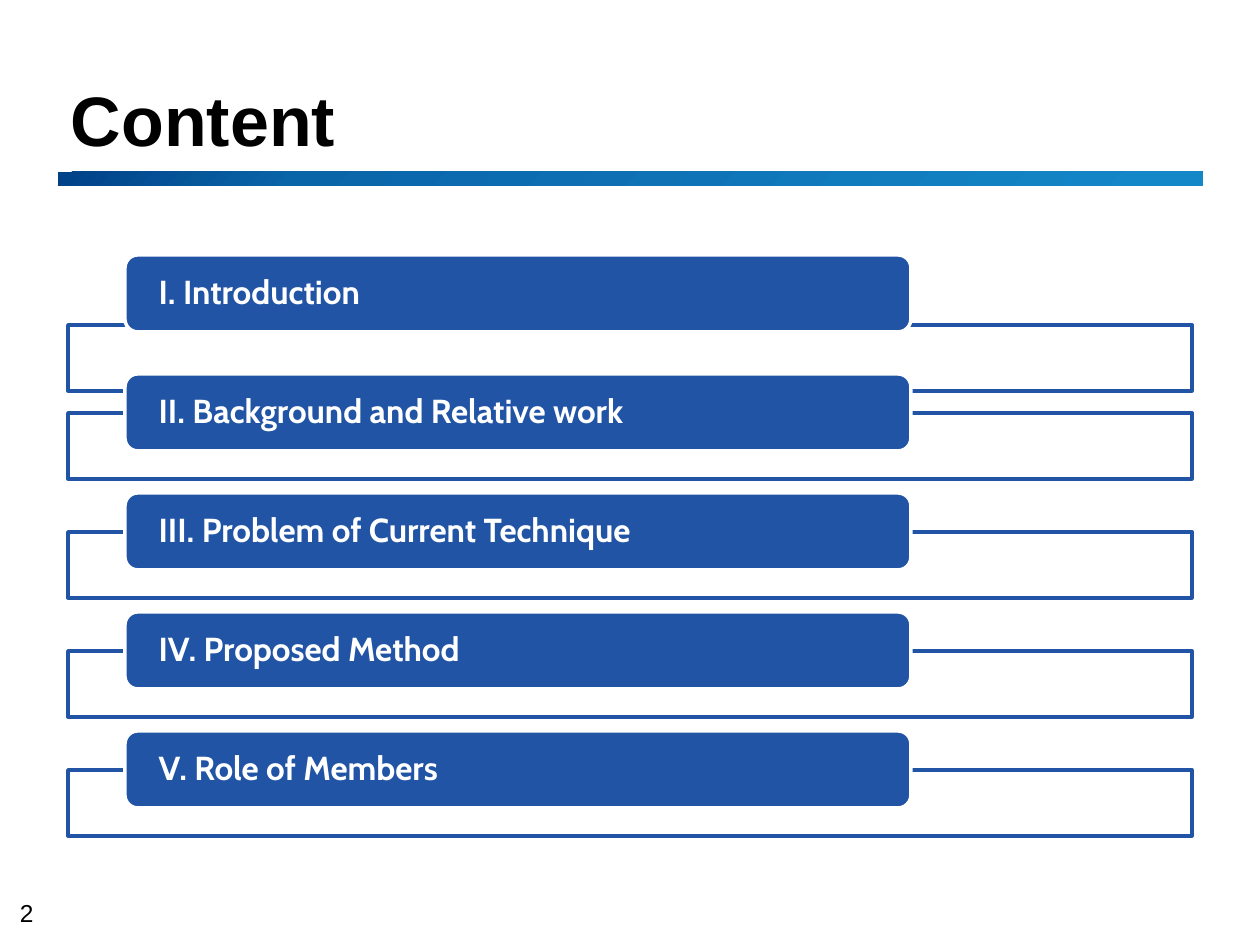
from copy import deepcopy

from pptx import Presentation
from pptx.dml.color import RGBColor
from pptx.enum.shapes import MSO_SHAPE
from pptx.enum.text import MSO_ANCHOR, PP_ALIGN
from pptx.oxml.ns import qn
from pptx.util import Inches, Pt
from lxml import etree

RECT = MSO_SHAPE.RECTANGLE
ROUNDED = MSO_SHAPE.ROUNDED_RECTANGLE
MIDDLE, BOTTOM = MSO_ANCHOR.MIDDLE, MSO_ANCHOR.BOTTOM
LEFT = PP_ALIGN.LEFT

PX = Inches(1) // 126
BLACK = RGBColor(0x00, 0x00, 0x00)
WHITE = RGBColor(0xFF, 0xFF, 0xFF)
BLUE = RGBColor(0x22, 0x54, 0xA5)
BAR_STOPS = [
    (0, RGBColor(0x00, 0x41, 0x87)),
    (0.21, RGBColor(0x0A, 0x64, 0xA8)),
    (0.96, RGBColor(0x14, 0x87, 0xC8)),
]

SECTIONS = [
    "I. Introduction",
    "II. Background and Relative work",
    "III. Problem of Current Technique",
    "IV. Proposed Method",
    "V. Role of Members",
]
FIRST_TOP, STEP = 255, 119
FIRST_FRAME_DROP, FRAME_DROP = 70, 39


def add_box(kind, left, top, width, height):
    """Add a shape without shadow, placed in px."""
    shape = page.shapes.add_shape(
        kind, left * PX, top * PX, width * PX, height * PX)
    shape.shadow.inherit = False
    return shape


def write(shape, text, font_name, size, color, bold, anchor, inset_x, inset_y):
    """Fill a shape with one left-aligned paragraph and return it."""
    frame = shape.text_frame
    frame.word_wrap = True
    frame.vertical_anchor = anchor
    frame.margin_left = frame.margin_right = inset_x * PX
    frame.margin_top = frame.margin_bottom = inset_y * PX
    para = frame.paragraphs[0]
    para.text = text
    para.alignment = LEFT
    para.font.name = font_name
    para.font.size = Pt(size)
    para.font.bold = bold
    para.font.color.rgb = color
    return para


deck = Presentation()
deck.slide_width, deck.slide_height = Inches(10), Inches(7.5)
page = deck.slides.add_slide(deck.slide_layouts[6])

# Page number
number = page.shapes.add_textbox(20 * PX, 898 * PX, 36 * PX, 29 * PX)
write(number, "2", "Arial", 14, BLACK, False, BOTTOM, 0, 0)

# Gradient rule under the title
bar = add_box(RECT, 58, 172, 1145, 14)
bar.line.fill.background()
bar.fill.gradient()
bar.fill.gradient_angle = 315
stop_list = bar._element.spPr.find(".//" + qn("a:gsLst"))
stop_list.append(deepcopy(stop_list[-1]))
for stop, (position, color) in zip(bar.fill.gradient_stops, BAR_STOPS):
    stop.position = position
    stop.color.rgb = color

# Title
title = page.shapes.add_textbox(58 * PX, 42 * PX, 1142 * PX, 125 * PX)
heading = write(title, "Content", "Arial", 40, BLACK, True, BOTTOM, 13, 6)
heading.line_spacing = Pt(36)

# Section list: an outlined frame behind each label
for index, section in enumerate(SECTIONS):
    top = FIRST_TOP + index * STEP
    drop = FRAME_DROP if index else FIRST_FRAME_DROP
    outline = add_box(RECT, 68, top + drop, 1124, 66)
    outline.fill.solid()
    outline.fill.fore_color.rgb = WHITE
    fill_color = outline._element.spPr.find(
        qn("a:solidFill") + "/" + qn("a:srgbClr"))
    etree.SubElement(fill_color, qn("a:alpha"), val="90000")
    outline.line.color.rgb = BLUE
    outline.line.width = Pt(2)

    label = add_box(ROUNDED, 125, top, 786, 77)
    label.fill.solid()
    label.fill.fore_color.rgb = BLUE
    label.line.color.rgb = WHITE
    label.line.width = Pt(2)
    para = write(label, section, "Cabin", 19, WHITE, True, MIDDLE, 30, 0)
    para.line_spacing = 0.9

deck.save("out.pptx")
